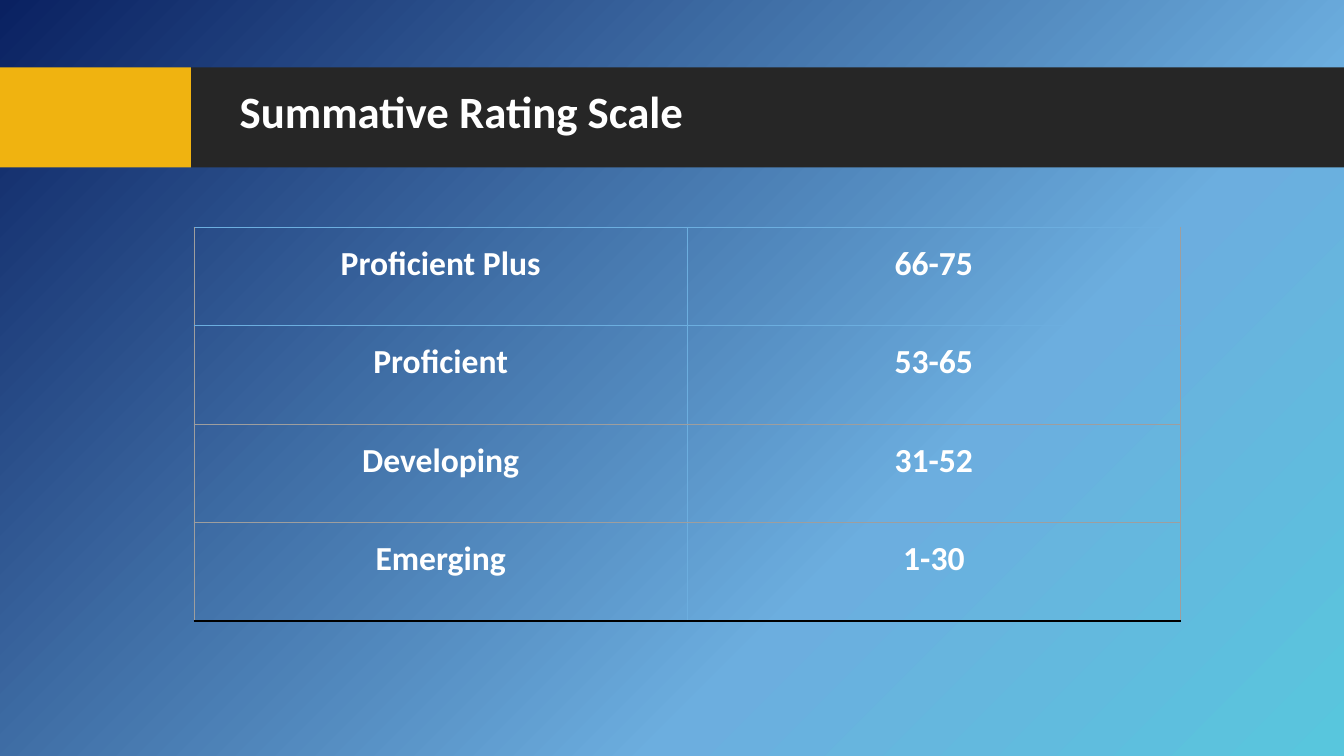
"""Build the Summative Rating Scale slide."""
from lxml import etree
from pptx import Presentation, util as u
from pptx.dml.color import RGBColor
from pptx.enum import shapes, text
from pptx.oxml.ns import qn

TITLE = "Summative Rating Scale"
RATINGS = [
    ("Proficient Plus", "66-75"),
    ("Proficient", "53-65"),
    ("Developing", "31-52"),
    ("Emerging", "1-30"),
]
BACKDROP = [(0, "58C6DD"), (33, "6CAEDF"), (100, "0A2161")]
BACKDROP_ANGLE = 225
GREY, BLUE, BLACK, WHITE = "9E9E9E", "6CAEDF", "000000", "FFFFFF"
ROW_LINES = [(BLUE, 0.75), (BLUE, 0.75), (GREY, 0.75), (GREY, 0.75), (BLACK, 1)]
COLUMN_LINES = [(GREY, 0.75), (BLUE, 0.75), (GREY, 0.75)]

SLIDE_W, SLIDE_H = 33.87, 19.05
BAND_TOP, BAND_H, ACCENT_W = 1.7, 2.52, 4.81
BANDS = [(ACCENT_W, SLIDE_W - ACCENT_W, "262626"), (0, ACCENT_W, "F0B310")]
TITLE_BOX = (5.79, 2.13, 27.89, 1.75)
TABLE_LEFT, TABLE_TOP, COLUMN_W, ROW_H = 4.89, 5.73, 12.43, 2.48


def rgb(value):
    return RGBColor.from_string(value)


def add_color(parent, value):
    etree.SubElement(parent, qn("a:srgbClr"), val=value)


def paint_backdrop(s):
    s.background.fill.gradient()
    grad = s._element.find(".//" + qn("a:gradFill"))
    stops = grad.find(qn("a:gsLst"))
    for stop in list(stops):
        stops.remove(stop)
    for percent, value in BACKDROP:
        add_color(etree.SubElement(stops, qn("a:gs"), pos=str(percent * 1000)), value)
    grad.find(qn("a:lin")).set("ang", str(BACKDROP_ANGLE * 60000))


def write(tf, words, size, spacing, align):
    tf.text = words
    p = tf.paragraphs[0]
    p.alignment, p.line_spacing = align, spacing
    font = p.runs[0].font
    font.name, font.size, font.bold = "Calibri", u.Pt(size), True
    font.color.rgb = rgb(WHITE)


def set_borders(cell, row, col):
    tc_pr = cell._tc.get_or_add_tcPr()
    sides = [("a:lnL", COLUMN_LINES[col]), ("a:lnR", COLUMN_LINES[col + 1]),
             ("a:lnT", ROW_LINES[row]), ("a:lnB", ROW_LINES[row + 1])]
    for i, (tag, (value, width)) in enumerate(sides):
        ln = etree.Element(qn(tag), w=str(u.Pt(width)))
        add_color(etree.SubElement(ln, qn("a:solidFill")), value)
        tc_pr.insert(i, ln)


def add_ratings(s):
    columns = len(RATINGS[0])
    table = s.shapes.add_table(
        len(RATINGS), columns, u.Cm(TABLE_LEFT), u.Cm(TABLE_TOP),
        u.Cm(COLUMN_W * columns), u.Cm(ROW_H * len(RATINGS))).table
    table.first_row = table.horz_banding = False
    for i, rating in enumerate(RATINGS):
        for j, words in enumerate(rating):
            cell = table.cell(i, j)
            cell.fill.background()
            cell.margin_left = cell.margin_right = u.Cm(0.18)
            cell.margin_top = cell.margin_bottom = u.Cm(0.25)
            write(cell.text_frame, words, 24, 1.15, text.PP_ALIGN.CENTER)
            set_borders(cell, i, j)


def main():
    prs = Presentation()
    prs.slide_width, prs.slide_height = u.Cm(SLIDE_W), u.Cm(SLIDE_H)
    s = prs.slides.add_slide(prs.slide_layouts[6])
    paint_backdrop(s)
    for left, width, value in BANDS:
        sp = s.shapes.add_shape(shapes.MSO_SHAPE.RECTANGLE, u.Cm(left),
                                u.Cm(BAND_TOP), u.Cm(width), u.Cm(BAND_H))
        sp.shadow.inherit = False
        sp.fill.solid()
        sp.fill.fore_color.rgb = rgb(value)
        sp.line.fill.background()
    tf = s.shapes.add_textbox(*map(u.Cm, TITLE_BOX)).text_frame
    tf.word_wrap = True
    write(tf, TITLE, 32, 0.9, text.PP_ALIGN.LEFT)
    add_ratings(s)
    prs.save("out.pptx")


if __name__ == "__main__":
    main()
